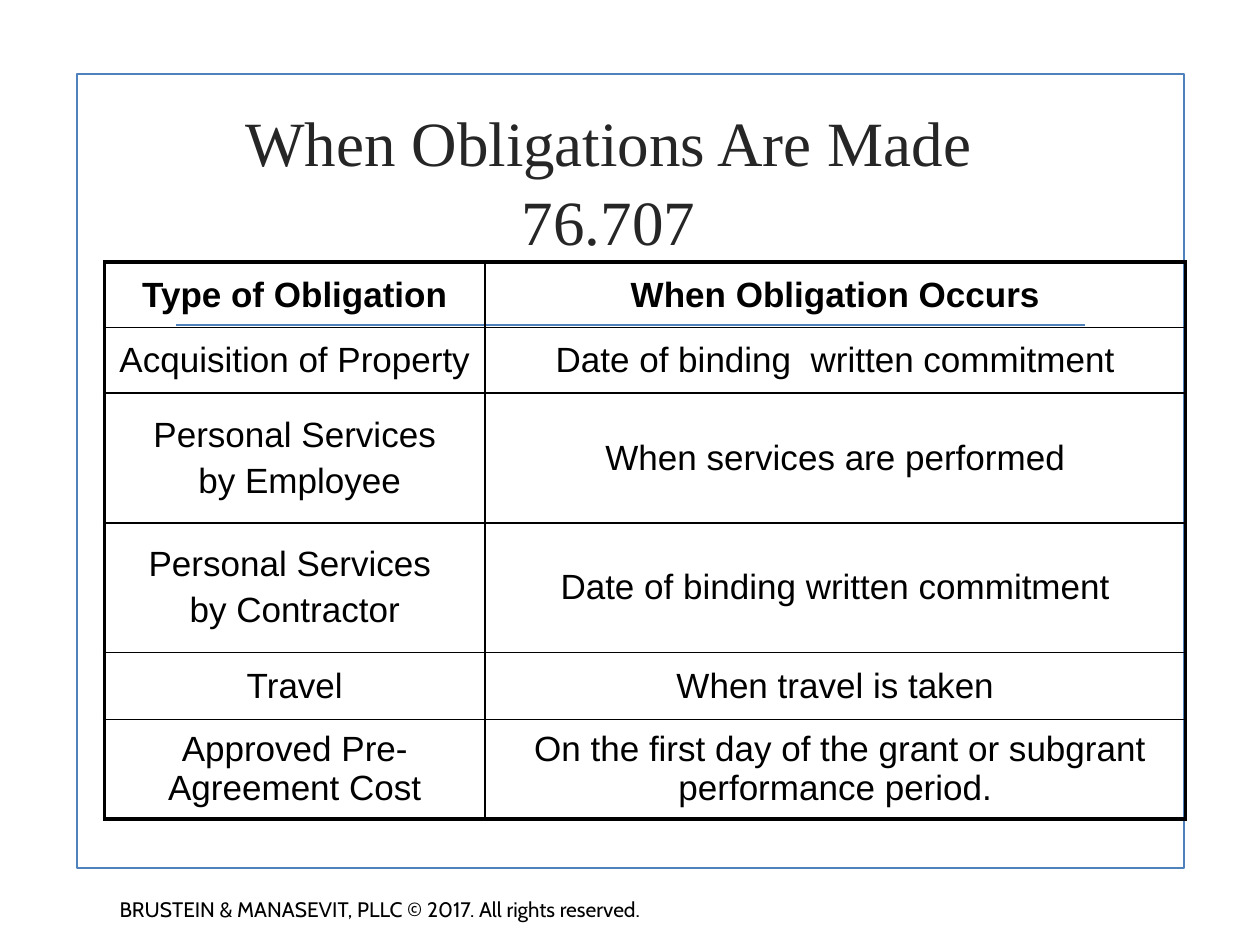
from lxml import etree
from pptx import Presentation
from pptx.dml.color import RGBColor
from pptx.enum.shapes import MSO_CONNECTOR as CONN, MSO_SHAPE as SHAPE
from pptx.enum.text import MSO_ANCHOR as ANCHOR, PP_ALIGN as ALIGN
from pptx.oxml.ns import qn
from pptx.util import Inches, Pt

COLUMNS = [3.02, 5.56]
HEIGHTS = [0.52, 0.52, 1.03, 1.03, 0.53, 0.79]
OBLIGATIONS = [
    ("Type of Obligation", "When Obligation Occurs"),
    ("Acquisition of Property", "Date of binding  written commitment"),
    ("Personal Services\n by Employee", "When services are performed"),
    ("Personal Services \nby Contractor", "Date of binding written commitment"),
    ("Travel", "When travel is taken"),
    ("Approved Pre-Agreement Cost",
     " On the first day of the grant or subgrant performance period."),
]


def color(value):
    return RGBColor.from_string(value)


class Deck:
    """Holds the style and the current slide, and adds each kind of element."""

    BLACK, BLUE, GREY = "000000", "4F81BD", "262626"
    TITLE, BODY, FOOTER = "Times New Roman", "Arial", "Cabin"
    RULE, THIN, THICK = 1.25, 1, 2.25

    def __init__(self, width, height):
        self.prs = Presentation()
        self.prs.slide_width, self.prs.slide_height = Inches(width), Inches(height)
        self.s = self.prs.slides.add_slide(self.prs.slide_layouts[6])

    def frame(self, *box):
        sp = self.s.shapes.add_shape(SHAPE.RECTANGLE, *map(Inches, box))
        sp.shadow.inherit = False
        sp.fill.background()
        self.stroke(sp.line)

    def rule(self, *ends):
        cn = self.s.shapes.add_connector(CONN.STRAIGHT, *map(Inches, ends))
        self.stroke(cn.line)
        etree.SubElement(cn._element.spPr, qn("a:effectLst"))

    def stroke(self, line):
        line.color.rgb = color(self.BLUE)
        line.width = Pt(self.RULE)

    def run(self, p, text, size, font, ink, bold=False):
        r = p.add_run()
        r.text = text
        r.font.size, r.font.name, r.font.bold = Pt(size), font, bold
        r.font.color.rgb = color(ink)

    def text_box(self, *box):
        tf = self.s.shapes.add_textbox(*map(Inches, box)).text_frame
        tf.word_wrap = True
        return tf

    def title(self, lines, *box):
        tf = self.text_box(*box)
        tf.vertical_anchor, tf.margin_top = ANCHOR.TOP, Inches(0.04)
        p = tf.paragraphs[0]
        p.alignment, p.line_spacing = ALIGN.CENTER, 1.05
        for i, line in enumerate(lines):
            if i:
                p.add_line_break()
            self.run(p, line, 36, self.TITLE, self.GREY)

    def footer(self, text, *box):
        self.run(self.text_box(*box).paragraphs[0], text, 12, self.FOOTER, self.BLACK)

    def table(self, rows, widths, heights, left, top):
        box = left, top, sum(widths), sum(heights)
        table = self.s.shapes.add_table(
            len(rows), len(widths), *map(Inches, box)).table
        table.first_row = table.horz_banding = False
        for column, width in zip(table.columns, widths):
            column.width = Inches(width)
        for i, (row, height) in enumerate(zip(rows, heights)):
            table.rows[i].height = Inches(height)
            for j, text in enumerate(row):
                cell = table.cell(i, j)
                self.fill_cell(cell, text, bold=i == 0)
                self.borders(cell, {
                    "L": j == 0, "R": j == len(widths) - 1,
                    "T": i == 0, "B": i == len(rows) - 1})

    def fill_cell(self, cell, text, bold):
        cell.vertical_anchor = ANCHOR.MIDDLE
        cell.margin_left = cell.margin_right = Inches(0.09)
        cell.margin_top = cell.margin_bottom = Inches(0.05)
        tf = cell.text_frame
        for i, line in enumerate(text.split("\n")):
            p = tf.add_paragraph() if i else tf.paragraphs[0]
            p.alignment = ALIGN.CENTER
            if i:
                p.space_before = Pt(4)
            self.run(p, line, 20, self.BODY, self.BLACK, bold)

    def borders(self, cell, outer):
        tc_pr = cell._tc.get_or_add_tcPr()
        for side, is_outer in outer.items():
            width = Pt(self.THICK if is_outer else self.THIN)
            ln = etree.SubElement(tc_pr, qn(f"a:ln{side}"), w=str(width))
            fill = etree.SubElement(ln, qn("a:solidFill"))
            etree.SubElement(fill, qn("a:srgbClr"), val=self.BLACK)
        cell.fill.background()


def main():
    deck = Deck(10, 7.5)
    deck.frame(0.61, 0.59, 8.79, 6.3)
    deck.rule(1.4, 2.58, 8.61, 2.58)
    deck.title(["When Obligations Are Made", "76.707"], 0.58, 0.75, 8.5, 1.76)
    deck.table(OBLIGATIONS, COLUMNS, HEIGHTS, 0.83, 2.08)
    deck.footer("BRUSTEIN & MANASEVIT, PLLC © 2017. All rights reserved.",
                0.85, 7.07, 6.92, 0.3)
    deck.prs.save("out.pptx")


if __name__ == "__main__":
    main()
